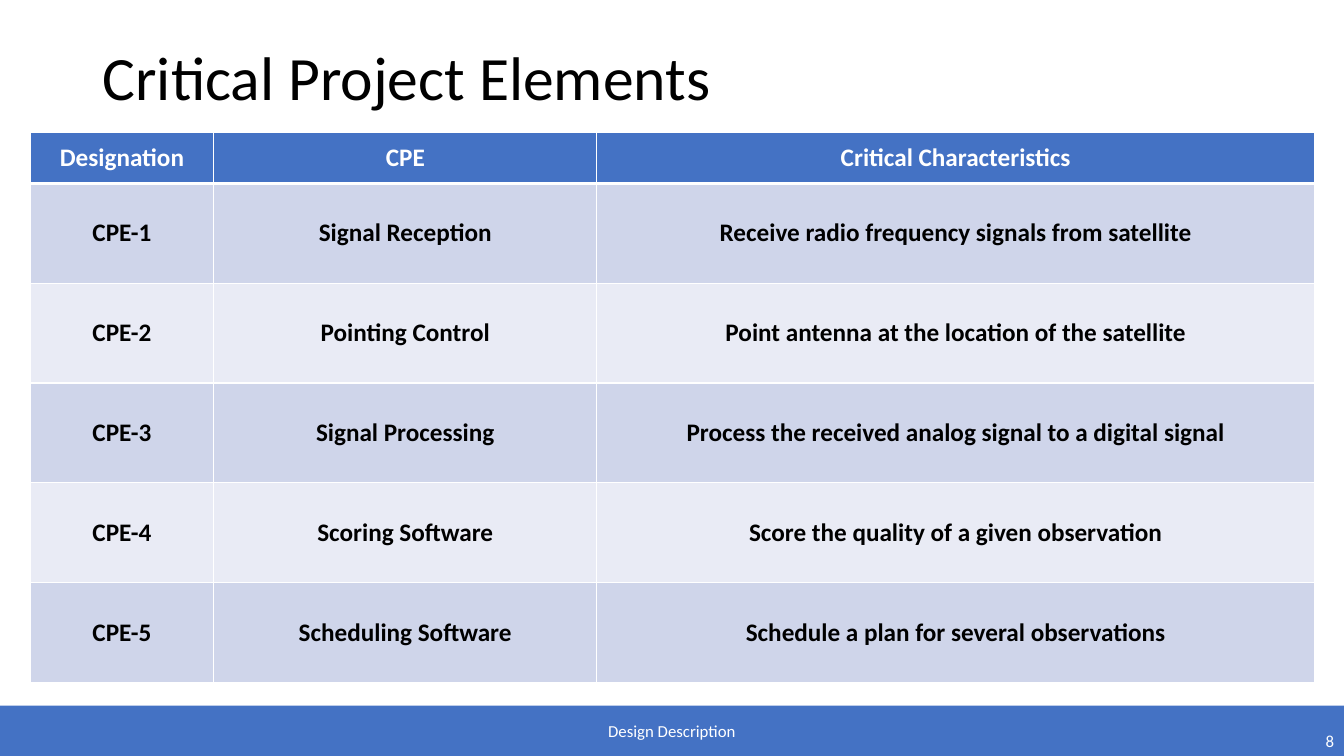
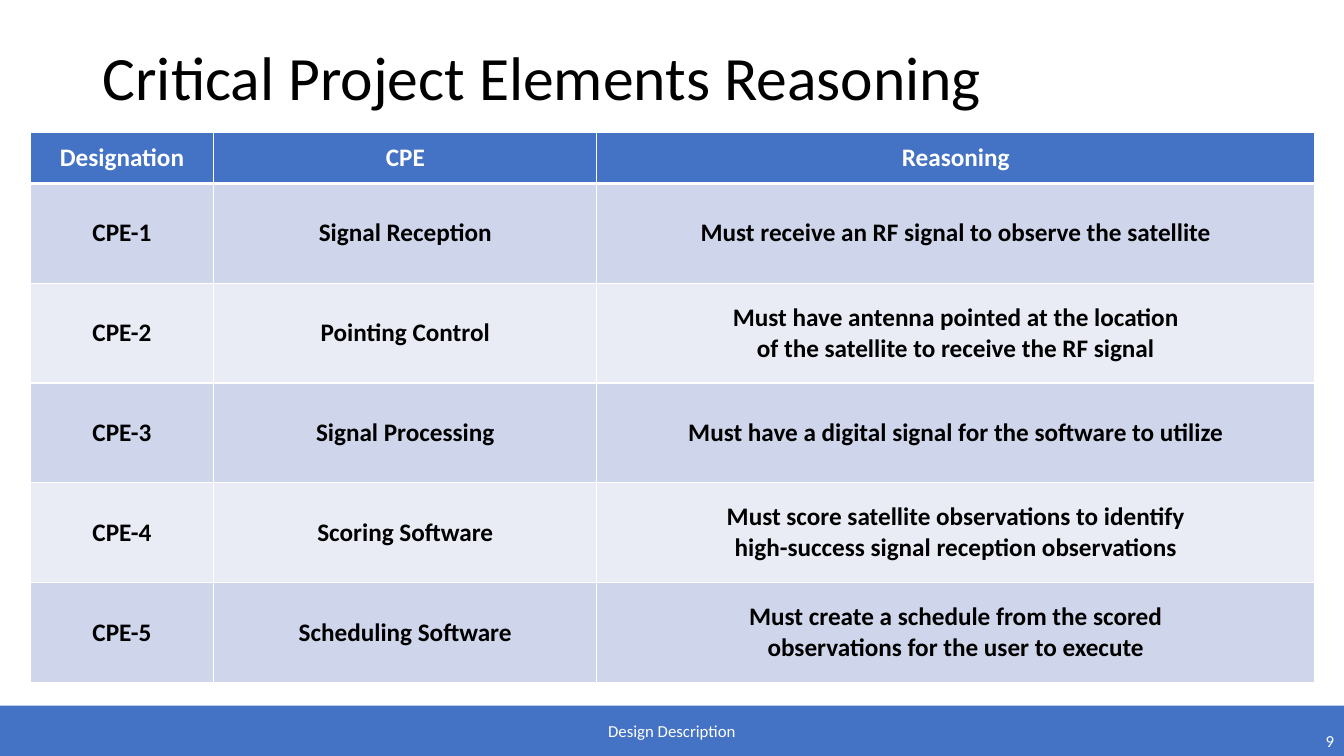
from lxml import etree
from pptx import Presentation
from pptx.dml.color import RGBColor
from pptx.enum.shapes import MSO_SHAPE
from pptx.enum.text import MSO_ANCHOR, PP_ALIGN
from pptx.oxml.ns import qn
from pptx.util import Pt

LEFT, CENTER, RIGHT = PP_ALIGN.LEFT, PP_ALIGN.CENTER, PP_ALIGN.RIGHT
MIDDLE = MSO_ANCHOR.MIDDLE
RECT = MSO_SHAPE.RECTANGLE

FONT = "Calibri"
COLORS = {
    "blue": "4472C4",
    "band_dark": "CFD5EA",
    "band_light": "E9EBF5",
    "white": "FFFFFF",
    "black": "000000",
}
FOOTER = "Design Description"
ELEMENTS = [
    "Signal Reception",
    "Pointing Control",
    "Signal Processing",
    "Scoring Software",
    "Scheduling Software",
]
SLIDES = [
    {
        "title": "Critical Project Elements",
        "number": 8,
        "heading": "Critical Characteristics",
        "details": [
            "Receive radio frequency signals from satellite",
            "Point antenna at the location of the satellite",
            "Process the received analog signal to a digital signal",
            "Score the quality of a given observation",
            "Schedule a plan for several observations",
        ],
    },
    {
        "title": "Critical Project Elements Reasoning",
        "number": 9,
        "heading": "Reasoning",
        "details": [
            "Must receive an RF signal to observe the satellite",
            "Must have antenna pointed at the location\n"
            "of the satellite to receive the RF signal",
            "Must have a digital signal for the software to utilize",
            "Must score satellite observations to identify\n"
            "high-success signal reception observations",
            "Must create a schedule from the scored\n"
            "observations for the user to execute",
        ],
    },
]

PX = 9144
SLIDE_W, SLIDE_H = 1333, 750
TITLE_BOX = (92, 7, 1150, 145)
FOOTER_BOX = (0, 700, SLIDE_W, 50)
NUMBER_BOX = (1033, 719, 300, 31)
TABLE_LEFT, TABLE_TOP = 30, 131
COL_WIDTHS = [182, 380, 712]
HEADER_H, ROW_H = 51, 99
THIN, THICK = 1, 3


def px(*lengths):
    return [length * PX for length in lengths]


def rgb(name):
    return RGBColor.from_string(COLORS[name])


def write(tf, text, size, color, align=LEFT, bold=False, spacing=None):
    tf.word_wrap = True
    tf.vertical_anchor = MIDDLE
    tf.text = text
    for p in tf.paragraphs:
        p.alignment = align
        p.line_spacing = spacing
        p.font.name = FONT
        p.font.size = Pt(size)
        p.font.bold = bold
        p.font.color.rgb = rgb(color)


def add_text(s, box, text, size, color, **style):
    sp = s.shapes.add_textbox(*px(*box))
    write(sp.text_frame, text, size, color, **style)


def add_footer(s, number):
    sp = s.shapes.add_shape(RECT, *px(*FOOTER_BOX))
    sp.shadow.inherit = False
    sp.fill.solid()
    sp.fill.fore_color.rgb = rgb("blue")
    sp.line.fill.background()
    write(sp.text_frame, FOOTER, 12, "white", align=CENTER)
    add_text(s, NUMBER_BOX, str(number), 12, "white", align=RIGHT)


def set_borders(cell, top, bottom):
    tc_pr = cell._tc.get_or_add_tcPr()
    for side, width in (("L", THIN), ("R", THIN), ("T", top), ("B", bottom)):
        ln = etree.SubElement(tc_pr, qn(f"a:ln{side}"), w=str(Pt(width)))
        fill = etree.SubElement(ln, qn("a:solidFill"))
        etree.SubElement(fill, qn("a:srgbClr"), val=COLORS["white"])


def add_elements_table(s, heading, details):
    rows = [("Designation", "CPE", heading)]
    for i, (element, detail) in enumerate(zip(ELEMENTS, details), 1):
        rows.append((f"CPE-{i}", element, detail))
    heights = [HEADER_H] + [ROW_H] * len(ELEMENTS)
    box = px(TABLE_LEFT, TABLE_TOP, sum(COL_WIDTHS), sum(heights))
    table = s.shapes.add_table(len(rows), len(COL_WIDTHS), *box).table
    for column, width in zip(table.columns, px(*COL_WIDTHS)):
        column.width = width
    for r, (values, height) in enumerate(zip(rows, px(*heights))):
        table.rows[r].height = height
        if r == 0:
            fill, color = "blue", "white"
        else:
            fill, color = ("band_dark" if r % 2 else "band_light"), "black"
        for c, value in enumerate(values):
            cell = table.cell(r, c)
            set_borders(cell, THICK if r == 1 else THIN, THICK if r == 0 else THIN)
            cell.fill.solid()
            cell.fill.fore_color.rgb = rgb(fill)
            write(cell.text_frame, value, 18, color, align=CENTER, bold=True)
            cell.vertical_anchor = MIDDLE


def main():
    prs = Presentation()
    prs.slide_width, prs.slide_height = px(SLIDE_W, SLIDE_H)
    for content in SLIDES:
        s = prs.slides.add_slide(prs.slide_layouts[6])
        add_text(s, TITLE_BOX, content["title"], 44, "black", spacing=0.9)
        add_footer(s, content["number"])
        add_elements_table(s, content["heading"], content["details"])
    prs.save("out.pptx")


if __name__ == "__main__":
    main()
